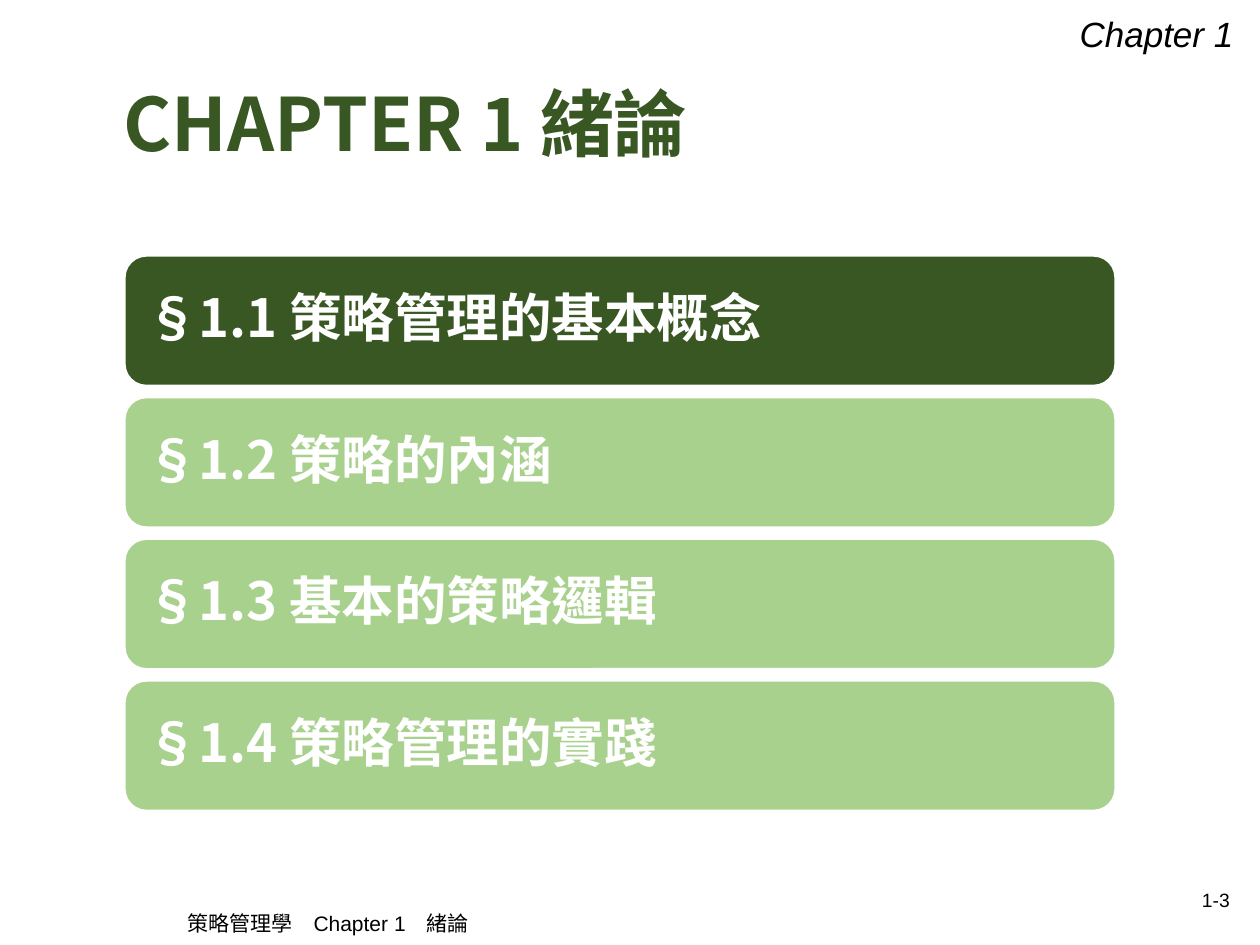
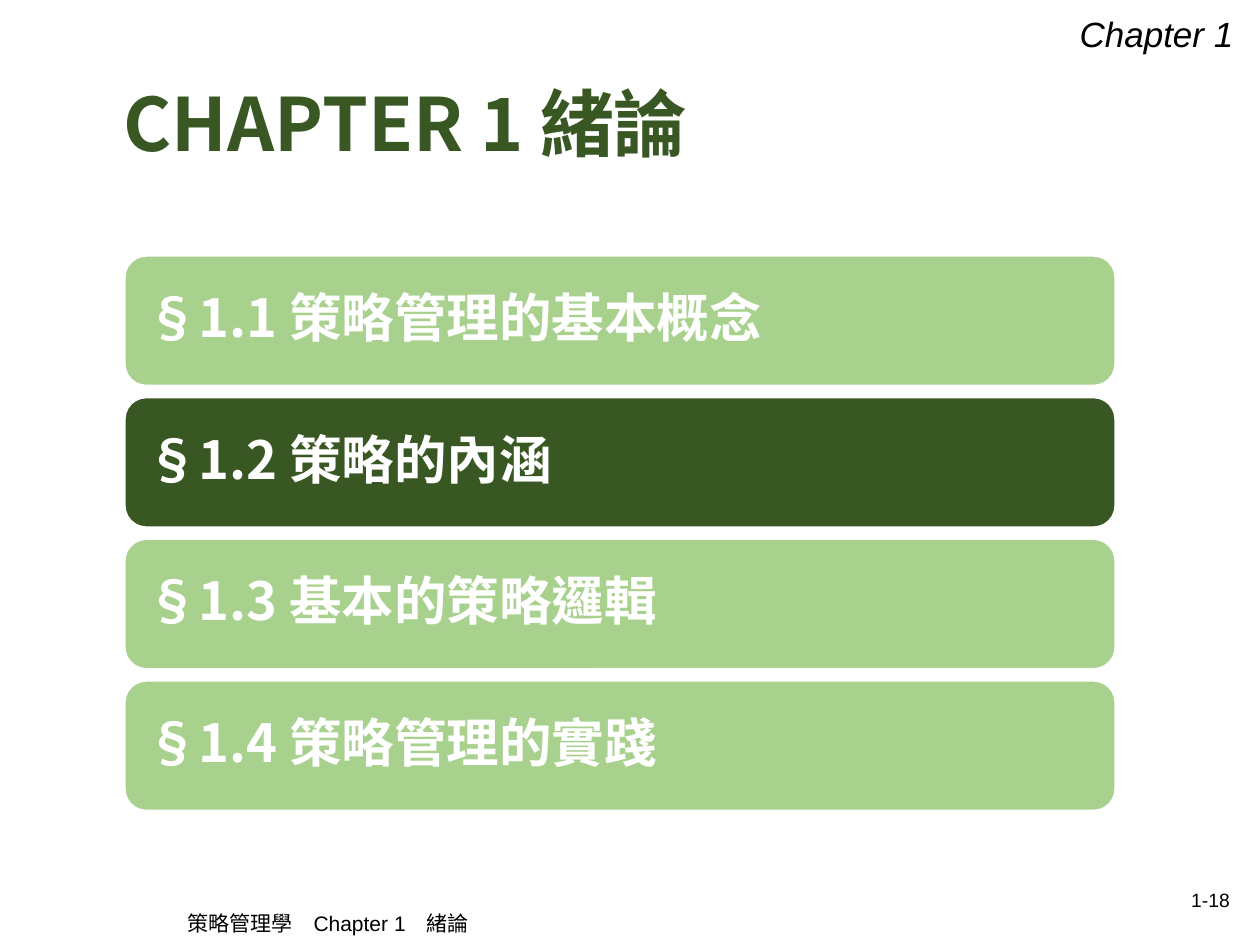
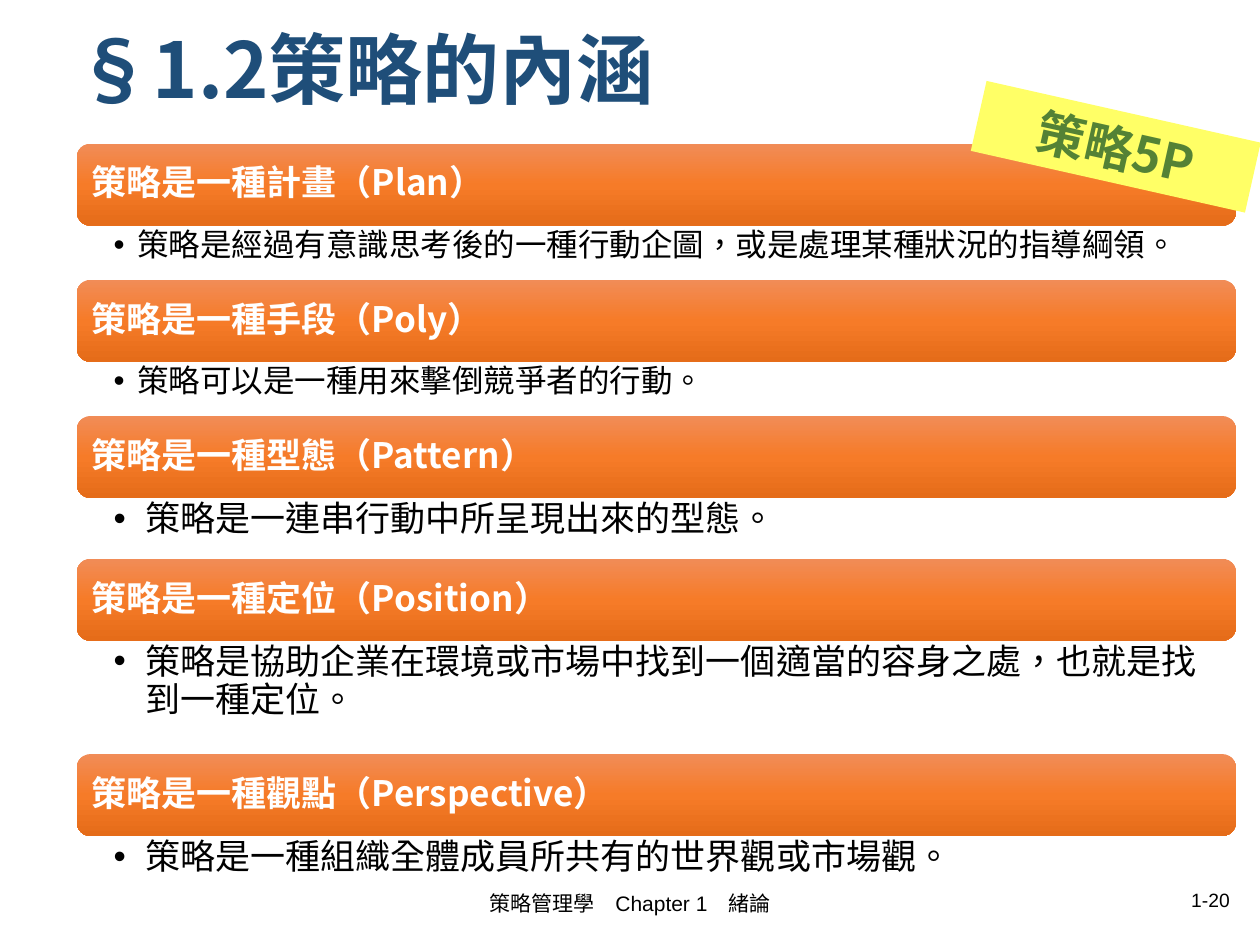
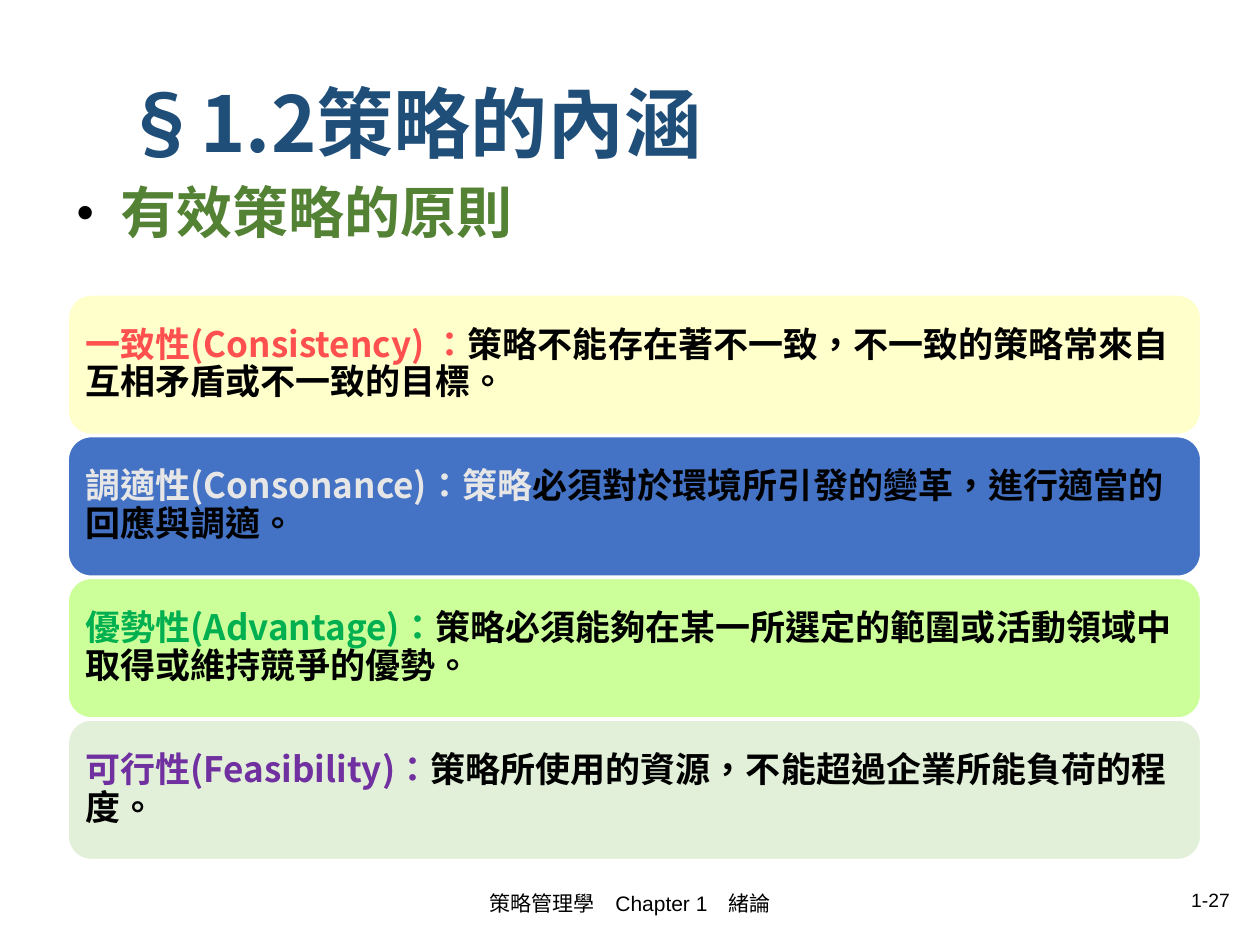
from collections import namedtuple

from lxml import etree
from pptx import Presentation
from pptx.dml.color import RGBColor
from pptx.enum.shapes import MSO_SHAPE
from pptx.enum.text import MSO_ANCHOR, MSO_AUTO_SIZE, PP_ALIGN
from pptx.oxml.ns import qn
from pptx.util import Pt

ROUNDED = MSO_SHAPE.ROUNDED_RECTANGLE
RECTANGLE = MSO_SHAPE.RECTANGLE
TOP, MIDDLE = MSO_ANCHOR.TOP, MSO_ANCHOR.MIDDLE
LEFT, CENTER, RIGHT = PP_ALIGN.LEFT, PP_ALIGN.CENTER, PP_ALIGN.RIGHT
TITLE_ONLY = 5

SANS, CJK = "Arial", "Noto Sans CJK SC"
BLACK, WHITE = "000000", "FFFFFF"
DARK_GREEN, MID_GREEN, LIGHT_GREEN = "385723", "548235", "A9D18E"
NAVY, YELLOW = "1F4E79", "FFFF66"
ORANGE_STOPS = ((0, "F18C57"), (50, "F67B28"), (100, "E56C19"))

Box = namedtuple("Box", "left top width height")
Style = namedtuple("Style", "size color font bold italic",
                   defaults=(BLACK, CJK, False, False))

TITLE_BOX = Box(63.4, 43.2, 598.3, 59)
HIGH_TITLE_BOX = Box(36, 17.3, 648, 49)
CHAPTER_BOX = Box(609.8, 3.6, 102.2, 31)
NUMBER_BOX = Box(508.3, 503.3, 201.6, 21.6)
LEFT_FOOTER_BOX = Box(36, 515.5, 303, 24.5)
CENTER_FOOTER_BOX = Box(238.3, 501.8, 243.4, 28.8)
TEXT_MARGINS = (7.2, 3.6, 7.2, 3.6)

FOOTER = "策略管理學　Chapter 1　緒論"
CHAPTER_TITLE = "CHAPTER 1 緒論"
SECTION_TITLE = "§1.2策略的內涵"
SECTIONS = (
    "§1.1 策略管理的基本概念",
    "§1.2 策略的內涵",
    "§1.3 基本的策略邏輯",
    "§1.4 策略管理的實踐",
)

# heading, explanation, size of the explanation, height of the explanation
FIVE_P = (
    ("策略是一種計畫（Plan）",
     "策略是經過有意識思考後的一種行動企圖，或是處理某種狀況的指導綱領。", 18, 31),
    ("策略是一種手段（Poly）",
     "策略可以是一種用來擊倒競爭者的行動。", 18, 31),
    ("策略是一種型態（Pattern）",
     "策略是一連串行動中所呈現出來的型態。", 20, 34.8),
    ("策略是一種定位（Position）",
     "策略是協助企業在環境或市場中找到一個適當的容身之處，也就是找到一種定位。", 20, 64.8),
    ("策略是一種觀點（Perspective）",
     "策略是一種組織全體成員所共有的世界觀或市場觀。", 20, 34.8),
)

# fill, lead colour, lead, rest
PRINCIPLES = (
    ("FFFFCC", "FF5050", "一致性(Consistency) ：",
     "策略不能存在著不一致，不一致的策略常來自互相矛盾或不一致的目標。"),
    ("4472C4", "E7E6E6", "調適性(Consonance)：策略",
     "必須對於環境所引發的變革，進行適當的回應與調適。"),
    ("CCFF99", "00B050", "優勢性(Advantage)：",
     "策略必須能夠在某一所選定的範圍或活動領域中取得或維持競爭的優勢。"),
    ("E2F0D9", "7030A0", "可行性(Feasibility)：",
     "策略所使用的資源，不能超過企業所能負荷的程度。"),
)


def rgb(color):
    return RGBColor.from_string(color)


def lengths(box):
    return [Pt(value) for value in box]


def stacked(box, count, gap):
    """Split a box into equal rows with a fixed gap."""
    height = (box.height - gap * (count - 1)) / count
    return [Box(box.left, box.top + row * (height + gap), box.width, height)
            for row in range(count)]


def write(shape, spans, align=LEFT, anchor=MIDDLE, margins=TEXT_MARGINS,
          spacing=None, wrap=True):
    """Fill a shape with one paragraph of (text, style) spans."""
    frame = shape.text_frame
    frame.word_wrap = wrap
    frame.auto_size = MSO_AUTO_SIZE.NONE
    frame.vertical_anchor = anchor
    (frame.margin_left, frame.margin_top,
     frame.margin_right, frame.margin_bottom) = lengths(margins)
    para = frame.paragraphs[0]
    para.alignment = align
    if spacing:
        para.line_spacing = spacing
    for text, style in spans:
        span = para.add_run()
        span.text = text
        font = span.font
        font.size, font.bold, font.italic = Pt(style.size), style.bold, style.italic
        font.color.rgb = rgb(style.color)
        font.name = style.font
        props = span._r.get_or_add_rPr()
        props.set("lang", "zh-TW")
        etree.SubElement(props, qn("a:ea"), typeface=style.font)
    return para


def add_bullet(para, indent, percent=100):
    props = para._p.get_or_add_pPr()
    props.set("marL", str(Pt(indent)))
    props.set("indent", str(-Pt(indent)))
    color = etree.SubElement(props, qn("a:buClr"))
    etree.SubElement(color, qn("a:srgbClr"), val=BLACK)
    etree.SubElement(props, qn("a:buSzPct"), val=str(percent * 1000))
    etree.SubElement(props, qn("a:buFont"), typeface=SANS)
    etree.SubElement(props, qn("a:buChar"), char="•")


def add_text(page, box, spans, **layout):
    return write(page.shapes.add_textbox(*lengths(box)), spans, **layout)


def add_panel(page, box, kind, fill=None, outline=None):
    panel = page.shapes.add_shape(kind, *lengths(box))
    panel.shadow.inherit = False
    if fill:
        panel.fill.solid()
        panel.fill.fore_color.rgb = rgb(fill)
    if outline:
        panel.line.color.rgb = rgb(outline)
        panel.line.width = Pt(1)
    else:
        panel.line.fill.background()
    return panel


def fill_gradient(shape, stops):
    """Shade a shape from top to bottom."""
    shape.fill.gradient()
    shape.fill.gradient_angle = 270
    stop_list = shape._element.spPr.find(".//" + qn("a:gsLst"))
    stop_list.clear()
    for percent, color in stops:
        stop = etree.SubElement(stop_list, qn("a:gs"), pos=str(percent * 1000))
        etree.SubElement(stop, qn("a:srgbClr"), val=color)


def add_page(deck, title, style, title_box, number, footer_box):
    """Start a slide with its title, footer and page number."""
    page = deck.slides.add_slide(deck.slide_layouts[TITLE_ONLY])
    heading = page.shapes.title
    heading.left, heading.top, heading.width, heading.height = lengths(title_box)
    write(heading, [(title, style)], spacing=0.9)
    add_text(page, footer_box, [(FOOTER, Style(12, font=SANS))], align=CENTER)
    add_text(page, NUMBER_BOX, [(f"1-{number}", Style(11, font=SANS))], align=RIGHT)
    return page


def add_section_bars(page, box, current):
    rows = stacked(box, len(SECTIONS), 6.8)
    for index, (section, row) in enumerate(zip(SECTIONS, rows)):
        fill = DARK_GREEN if index == current else LIGHT_GREEN
        bar = add_panel(page, row, ROUNDED, fill, WHITE)
        write(bar, [(section, Style(30, WHITE, bold=True))],
              margins=(8.6,) * 4, spacing=0.9)


def add_five_p(page, box, bar_height):
    top = box.top
    for heading, explanation, size, height in FIVE_P:
        bar = add_panel(page, Box(box.left, top, box.width, bar_height), ROUNDED)
        fill_gradient(bar, ORANGE_STOPS)
        write(bar, [(heading, Style(20, WHITE, bold=True))],
              margins=(6,) * 4, spacing=0.9)
        top += bar_height
        para = add_text(page, Box(box.left, top, box.width, height),
                        [(explanation, Style(size))], anchor=TOP,
                        margins=(21, 2, 10.5, 2), spacing=0.9)
        add_bullet(para, 13.5 if size == 18 else 18)
        top += height


def add_tag(page, box, text):
    tag = add_panel(page, box, RECTANGLE, YELLOW)
    tag.rotation = 12.7
    write(tag, [(text, Style(28, MID_GREEN, bold=True))], align=CENTER)


def add_principles(page, box):
    rows = stacked(box, len(PRINCIPLES), 1.1)
    for (fill, color, lead, rest), row in zip(PRINCIPLES, rows):
        panel = add_panel(page, row, ROUNDED, fill, WHITE)
        write(panel, [(lead, Style(20, color, bold=True)),
                      (rest, Style(20, bold=True))],
              margins=(6,) * 4, spacing=0.9)


def chapter_page(deck, number, current):
    page = add_page(deck, CHAPTER_TITLE, Style(42, DARK_GREEN, bold=True),
                    TITLE_BOX, number, LEFT_FOOTER_BOX)
    add_text(page, CHAPTER_BOX, [("Chapter 1", Style(20, font=SANS, italic=True))],
             anchor=TOP, wrap=False)
    add_section_bars(page, Box(71.3, 146.2, 566, 317), current)


def section_page(deck, number, title_box):
    return add_page(deck, SECTION_TITLE, Style(44, NAVY, bold=True),
                    title_box, number, CENTER_FOOTER_BOX)


def five_p_page(deck, number):
    page = section_page(deck, number, HIGH_TITLE_BOX)
    add_five_p(page, Box(43.9, 82.1, 662.4, 430.4), 46.8)
    add_tag(page, Box(557.3, 63.4, 160.6, 41), "策略5P")


def principles_page(deck, number):
    page = section_page(deck, number, TITLE_BOX)
    para = add_text(page, Box(36.7, 102.2, 598.3, 60),
                    [("有效策略的原則", Style(32, MID_GREEN, bold=True))],
                    anchor=TOP, spacing=0.9)
    add_bullet(para, 25, percent=88)
    add_principles(page, Box(38.9, 168.5, 647.3, 322.8))


def main():
    deck = Presentation()
    deck.slide_width, deck.slide_height = Pt(720), Pt(540)
    chapter_page(deck, 3, current=0)
    chapter_page(deck, 18, current=1)
    five_p_page(deck, 20)
    principles_page(deck, 27)
    deck.save("out.pptx")


if __name__ == "__main__":
    main()
